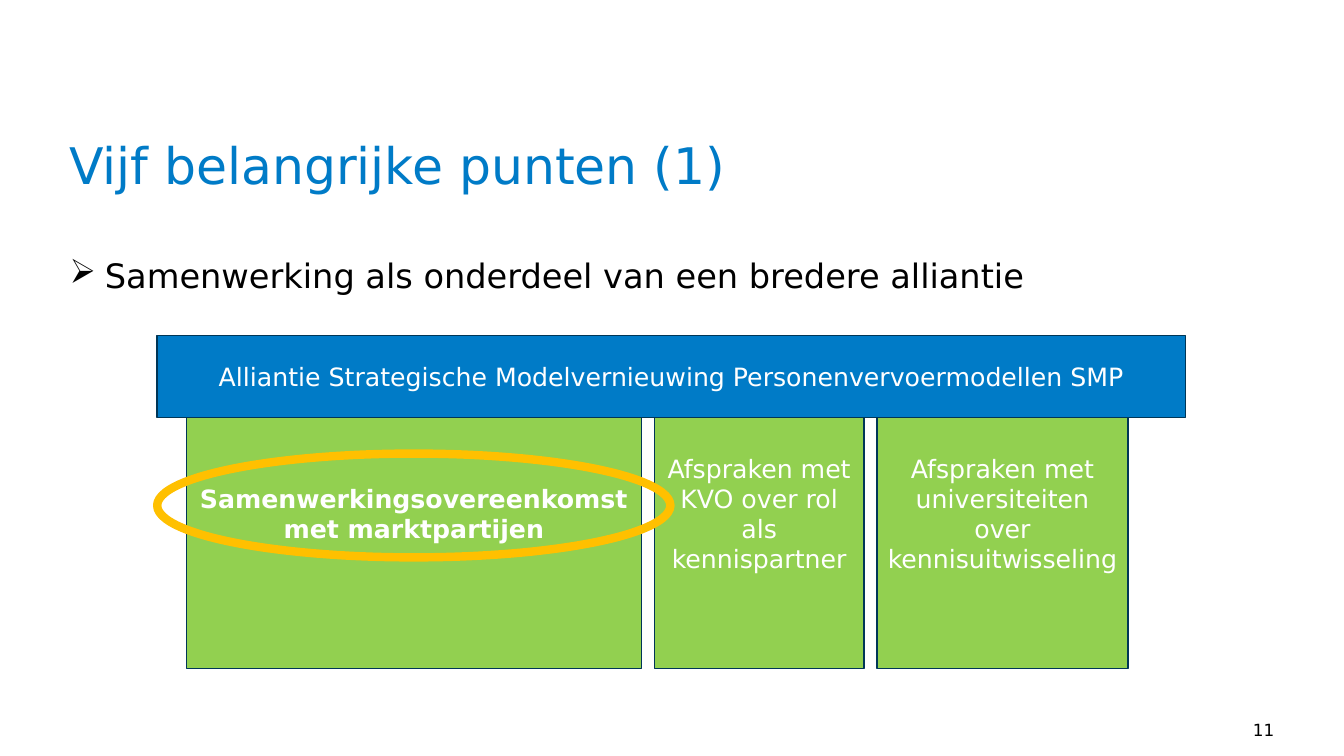
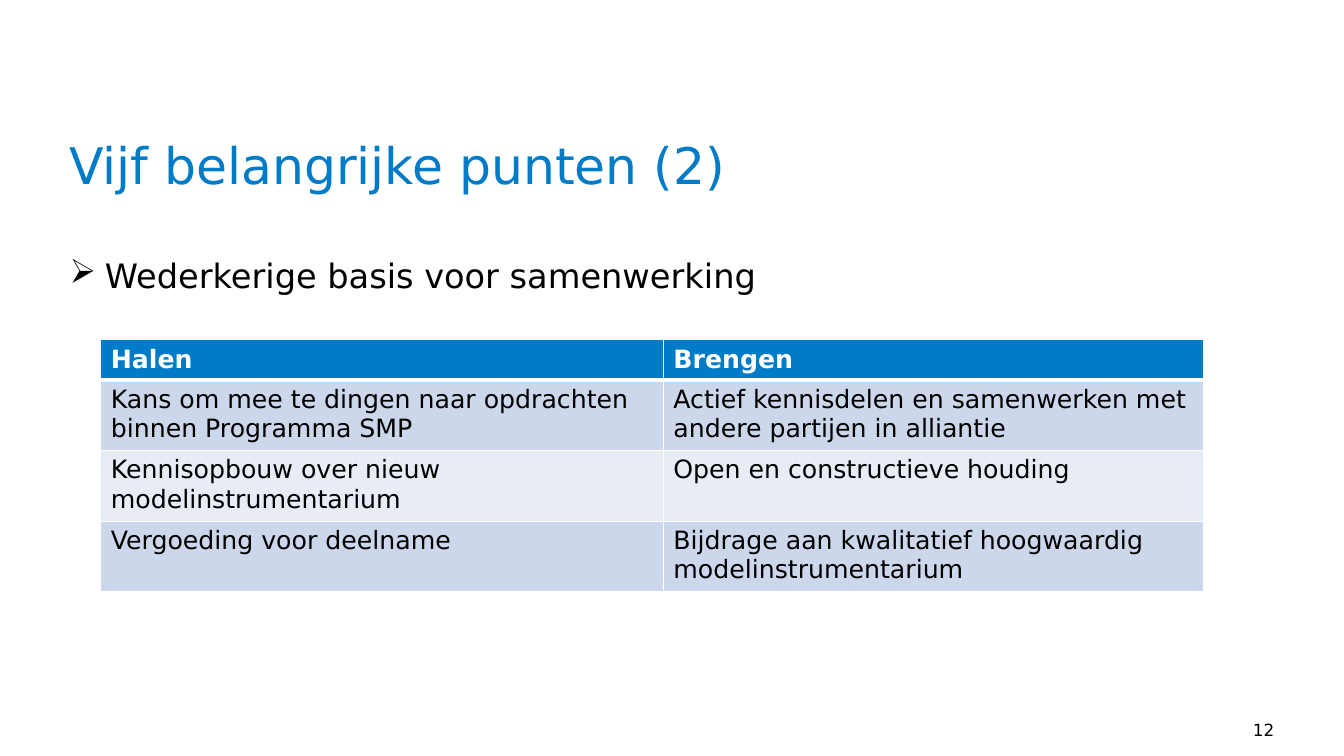
import dataclasses

import pptx
import pptx.dml.color
import pptx.enum.shapes
import pptx.enum.text
import pptx.oxml
import pptx.oxml.ns
import pptx.util
from lxml import etree

ALIGN = pptx.enum.text.PP_ALIGN
ANCHOR = pptx.enum.text.MSO_ANCHOR
SHAPE = pptx.enum.shapes.MSO_SHAPE


@dataclasses.dataclass(frozen=True)
class Theme:
    font: str = "DejaVu Sans"
    blue: str = "007BC7"
    navy: str = "003657"
    green: str = "92D050"
    amber: str = "FFC000"
    white: str = "FFFFFF"
    black: str = "000000"
    bands: tuple = ("CCD7EB", "E7ECF5")
    title_size: int = 36
    bullet_size: int = 24
    label_size: int = 18
    number_size: int = 12
    bullet_indent: float = 0.35
    line_spacing: float = 0.9


THEME = Theme()


@dataclasses.dataclass(frozen=True)
class Box:
    """A rectangle in EMU, divided by percentages of its own size."""
    left: int
    top: int
    width: int
    height: int

    def region(self, left, top, width, height):
        return Box(int(self.left + self.width * left / 100),
                   int(self.top + self.height * top / 100),
                   int(self.width * width / 100),
                   int(self.height * height / 100))

    def place(self):
        return self.left, self.top, self.width, self.height


SLIDE = Box(0, 0, pptx.util.Inches(13.33), pptx.util.Inches(7.5))
TITLE = SLIDE.region(5.18, 18.67, 89.72, 15.6)
BULLET = SLIDE.region(5.18, 34.27, 89.57, 6)
NUMBER = SLIDE.region(90.62, 95.2, 4.2, 2.67)
ALLIANCE = SLIDE.region(11.7, 44.4, 76.52, 44)
EXCHANGE = SLIDE.region(7.5, 44.93, 82.07, 32.4)


def rgb(color):
    return pptx.dml.color.RGBColor.from_string(color)


def apply(target, values):
    for name, value in values.items():
        setattr(target, name, value)


def write(frame, text, size, color, bold=False, **paragraph_format):
    paragraph = frame.paragraphs[0]
    paragraph.text = text
    apply(paragraph, paragraph_format)
    apply(paragraph.font, {"name": THEME.font, "bold": bold,
                           "size": pptx.util.Pt(size)})
    paragraph.font.color.rgb = rgb(color)


def add_bullet(paragraph):
    indent = pptx.util.Inches(THEME.bullet_indent)
    properties = paragraph._p.get_or_add_pPr()
    properties.set("marL", str(indent))
    properties.set("indent", str(-indent))
    bullet = etree.SubElement(properties, pptx.oxml.ns.qn("a:buChar"))
    bullet.set("char", "➢")


def add_text(slide, box, text, size, color, anchor=ANCHOR.TOP, bulleted=False,
             **paragraph_format):
    frame = slide.shapes.add_textbox(*box.place()).text_frame
    apply(frame, {"word_wrap": True, "vertical_anchor": anchor,
                  "margin_left": 0, "margin_top": 0,
                  "margin_right": 0, "margin_bottom": 0})
    if bulleted:
        add_bullet(frame.paragraphs[0])
    write(frame, text, size, color, **paragraph_format)


def add_page(presentation, number, title, bullet):
    """Add a slide with the shared title, leading bullet and page number."""
    slide = presentation.slides.add_slide(presentation.slide_layouts[6])
    add_text(slide, TITLE, title, THEME.title_size, THEME.blue,
             line_spacing=THEME.line_spacing)
    add_text(slide, BULLET, bullet, THEME.bullet_size, THEME.black,
             bulleted=True, line_spacing=THEME.line_spacing)
    add_text(slide, NUMBER, str(number), THEME.number_size, THEME.black,
             anchor=ANCHOR.BOTTOM, alignment=ALIGN.RIGHT)
    return slide


def add_figure(slide, kind, box, line, line_width, fill=None):
    shape = slide.shapes.add_shape(kind, *box.place())
    shape.shadow.inherit = False
    if fill:
        shape.fill.solid()
        shape.fill.fore_color.rgb = rgb(fill)
    else:
        shape.fill.background()
    shape.line.color.rgb = rgb(line)
    shape.line.width = pptx.util.Pt(line_width)
    return shape


def add_block(slide, box, text, fill, bold=False):
    shape = add_figure(slide, SHAPE.RECTANGLE, box, THEME.navy, 1, fill)
    apply(shape.text_frame, {"word_wrap": True, "vertical_anchor": ANCHOR.MIDDLE})
    write(shape.text_frame, text, THEME.label_size, THEME.white, bold,
          alignment=ALIGN.CENTER)


def add_alliance(slide, box, roof, pillars):
    """Draw pillars under a roof and ring the first pillar."""
    left, gap = 2.84, 1.27
    for index, (text, width) in enumerate(pillars):
        add_block(slide, box.region(left, 6.97, width, 93.03), text,
                  THEME.green, bold=index == 0)
        left += width + gap
    add_block(slide, box.region(0, 0, 100, 24.55), roof, THEME.blue)
    add_figure(slide, SHAPE.OVAL, box.region(0, 35.45, 49.9, 31.21), THEME.amber, 6)


def add_borders(cell, widths):
    properties = cell._tc.get_or_add_tcPr()
    for side, width in widths.items():
        properties.append(pptx.oxml.parse_xml(
            f'<a:ln{side} {pptx.oxml.ns.nsdecls("a")} w="{pptx.util.Pt(width)}">'
            f'<a:solidFill><a:srgbClr val="{THEME.white}"/></a:solidFill></a:ln{side}>'))


def add_exchange(slide, box, rows, column_shares, row_shares):
    """Draw a table with a heading row and banded body rows."""
    table = slide.shapes.add_table(len(rows), len(column_shares), *box.place()).table
    for column, share in zip(table.columns, column_shares):
        column.width = int(box.width * share / 100)
    for row, share in zip(table.rows, row_shares):
        row.height = int(box.height * share / 100)
    for row_index, texts in enumerate(rows):
        heading = row_index == 0
        fill = THEME.blue if heading else THEME.bands[(row_index - 1) % 2]
        color = THEME.white if heading else THEME.black
        for column_index, text in enumerate(texts):
            cell = table.cell(row_index, column_index)
            add_borders(cell, {"L": 1, "R": 1, "T": 3 if row_index == 1 else 1,
                               "B": 3 if heading else 1})
            cell.fill.solid()
            cell.fill.fore_color.rgb = rgb(fill)
            write(cell.text_frame, text, THEME.label_size, color, bold=heading)


def main():
    presentation = pptx.Presentation()
    apply(presentation, {"slide_width": SLIDE.width, "slide_height": SLIDE.height})

    slide = add_page(presentation, 11, "Vijf belangrijke punten (1)",
                     "Samenwerking als onderdeel van een bredere alliantie")
    add_alliance(
        slide, ALLIANCE,
        "Alliantie Strategische Modelvernieuwing Personenvervoermodellen SMP",
        [("Samenwerkingsovereenkomst met marktpartijen", 44.22),
         ("Afspraken met KVO over rol als kennispartner", 20.39),
         ("Afspraken met universiteiten over kennisuitwisseling", 24.41)])

    slide = add_page(presentation, 12, "Vijf belangrijke punten (2)",
                     "Wederkerige basis voor samenwerking")
    add_exchange(
        slide, EXCHANGE,
        [("Halen", "Brengen"),
         ("Kans om mee te dingen naar opdrachten binnen Programma SMP",
          "Actief kennisdelen en samenwerken met andere partijen in alliantie"),
         ("Kennisopbouw over nieuw modelinstrumentarium",
          "Open en constructieve houding"),
         ("Vergoeding voor deelname",
          "Bijdrage aan kwalitatief hoogwaardig modelinstrumentarium")],
        column_shares=(51, 49), row_shares=(16, 28, 28, 28))

    presentation.save("out.pptx")


if __name__ == "__main__":
    main()
